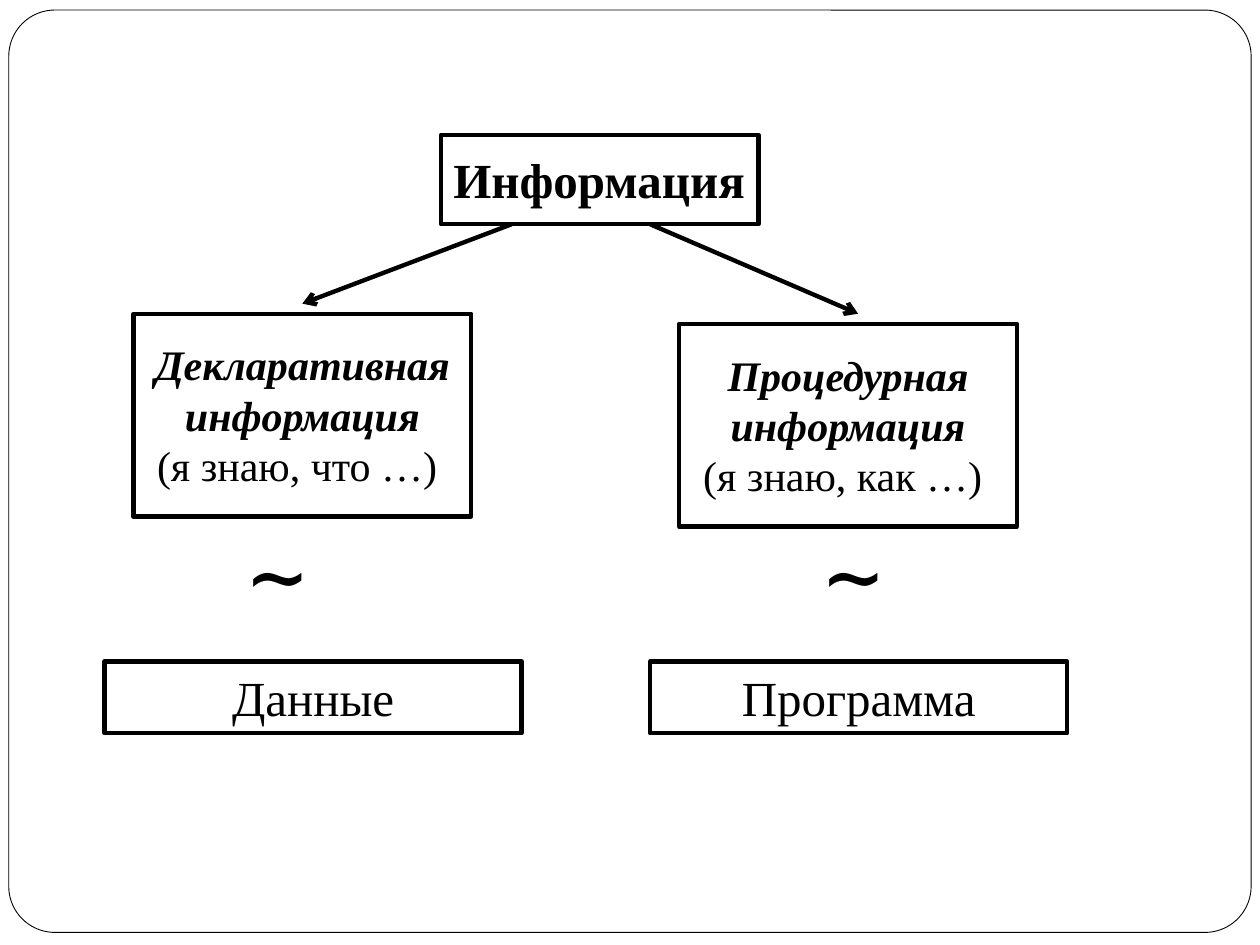
from pptx import Presentation
from pptx.dml.color import RGBColor as Rgb
from pptx.enum.shapes import MSO_CONNECTOR as Link, MSO_SHAPE as Kind
from pptx.enum.text import MSO_ANCHOR as Anchor, MSO_AUTO_SIZE as Fit, PP_ALIGN as Align
from pptx.oxml.ns import qn
from pptx.util import Pt
from lxml.etree import SubElement as Sub

PX = 9144
FONT = "Times New Roman"
HUE = {"ink": "000000", "paper": "FFFFFF"}


def px(*nums):
    """Turn px lengths into EMU."""
    return [n * PX for n in nums]


def ink(line, width):
    """Give a line its colour and width."""
    line.color.rgb = Rgb.from_string(HUE["ink"])
    line.width = Pt(width)


def write(shape, paras, size, align=Align.LEFT, pad=5):
    """Fill a shape with paragraphs of (text, bold, italic)."""
    frame = shape.text_frame
    frame.word_wrap = True
    frame.auto_size = Fit.SHAPE_TO_FIT_TEXT
    frame.vertical_anchor = Anchor.TOP
    frame.margin_left, frame.margin_top, frame.margin_right, frame.margin_bottom = px(10, pad, 10, pad)
    for i, (text, bold, italic) in enumerate(paras):
        para = frame.add_paragraph() if i else frame.paragraphs[0]
        para.alignment = align
        run = para.add_run()
        run.text = text
        font = run.font
        font.name, font.size, font.bold, font.italic = FONT, Pt(size), bold, italic
        font.color.rgb = Rgb.from_string(HUE["ink"])


def panel(slide, box, kind=Kind.RECTANGLE, width=2.5):
    """Draw an unfilled outlined shape."""
    shape = slide.shapes.add_shape(kind, *px(*box))
    shape.shadow.inherit = False
    shape.fill.background()
    ink(shape.line, width)
    return shape


def arrow(slide, start, end):
    """Draw an arrow from start to end."""
    link = slide.shapes.add_connector(Link.STRAIGHT, *px(*start, *end))
    ink(link.line, 2.5)
    Sub(link.line._get_or_add_ln(), qn("a:tailEnd"), type="arrow")
    Sub(link._element.spPr, qn("a:effectLst"))


def border(slide, box):
    """Draw the rounded page frame."""
    shape = panel(slide, box, Kind.ROUNDED_RECTANGLE, 0.5)
    shape.adjustments[0] = 0.05
    shape.fill.solid()
    shape.fill.fore_color.rgb = Rgb.from_string(HUE["paper"])


def root(slide, box, exits, tips):
    """Draw the top term and its arrows to the columns."""
    x, y, w, h = box
    write(panel(slide, box), [("Информация", True, False)], 28, pad=12)
    for dx, tip in zip(exits, tips):
        arrow(slide, (x + dx, y + h), tip)


def column(slide, box, term, note, match, shift):
    """Draw one kind of information above its counterpart."""
    x, y, w, h = box
    base = y + h
    paras = [(term, True, True), (note, False, False)]
    write(panel(slide, (x + 23, y, 268, 161)), paras, 24, Align.CENTER, 20)
    sign = slide.shapes.add_textbox(*px(x + shift, base - 168, 71, 84))
    write(sign, [("∼", True, False)], 44)
    write(panel(slide, (x, base - 57, w, 57)), [(match, False, False)], 28, Align.CENTER)


def main():
    """Build and save the slide."""
    deck = Presentation()
    deck.slide_width, deck.slide_height = px(1000, 750)
    slide = deck.slides.add_slide(deck.slide_layouts[6])
    border(slide, (7, 8, 986, 732))
    root(slide, (350, 107, 252, 71), (56, 166), ((240, 241), (681, 249)))
    column(slide, (83, 249, 331, 333), "Декларативная информация", "(я знаю, что …) ", "Данные", 102)
    column(slide, (516, 257, 331, 325), "Процедурная информация", "(я знаю, как …) ", "Программа", 126)
    deck.save("out.pptx")


if __name__ == "__main__":
    main()
